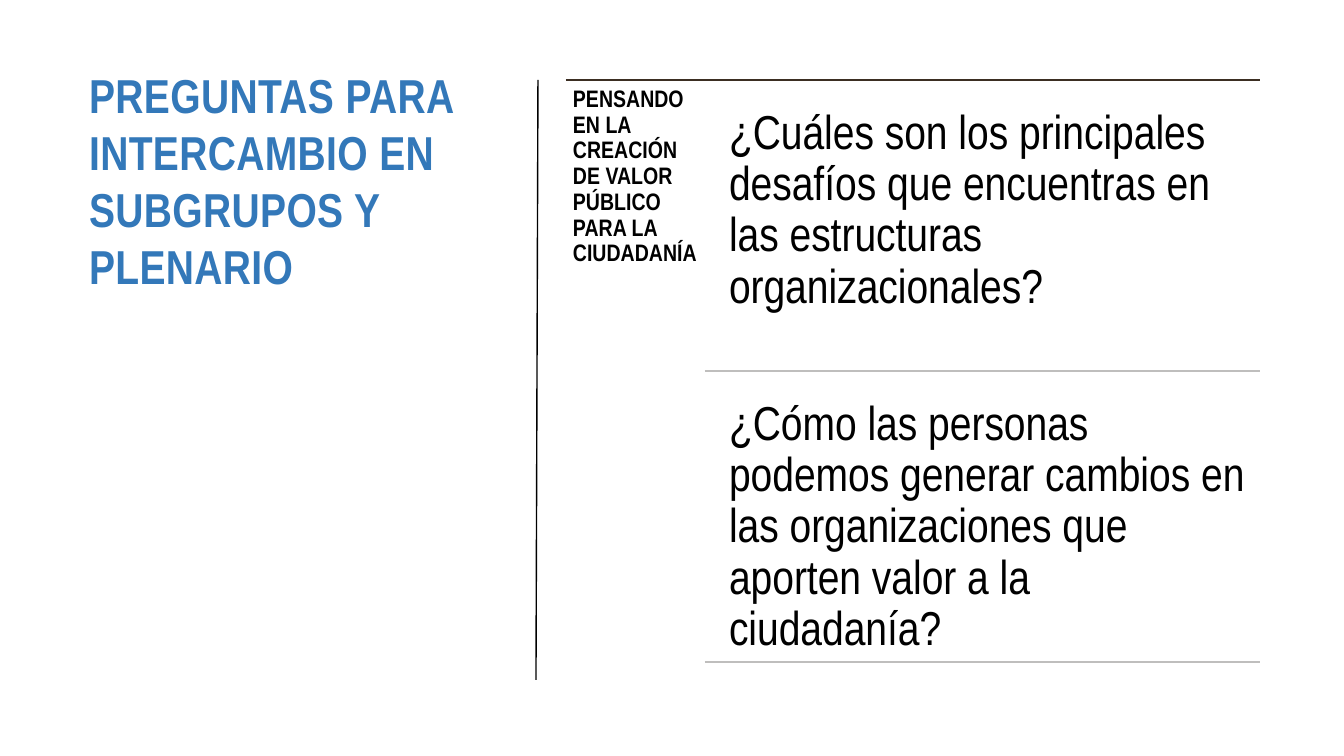
from dataclasses import dataclass

from lxml.etree import SubElement
from pptx import Presentation
from pptx.dml.color import RGBColor
from pptx.enum.shapes import MSO_CONNECTOR
from pptx.enum.text import MSO_ANCHOR, MSO_AUTO_SIZE, PP_ALIGN
from pptx.oxml.ns import qn
from pptx.util import Pt

TITLE = "PREGUNTAS PARA INTERCAMBIO EN SUBGRUPOS Y PLENARIO"
LABEL = "PENSANDO EN LA CREACIÓN DE VALOR PÚBLICO PARA LA CIUDADANÍA"
QUESTIONS = [
    "¿Cuáles son los principales desafíos que encuentras en las estructuras organizacionales?",
    "¿Cómo las personas podemos generar cambios en las organizaciones que aporten valor a la ciudadanía?",
]


@dataclass(frozen=True)
class Theme:
    font: str = "Arial Narrow"
    title_color: str = "3378B9"
    text_color: str = "000000"
    top_rule_color: str = "3B2E22"
    row_rule_color: str = "BFBEBD"
    large: int = 34
    small: int = 17
    rule_width: int = 1


THEME = Theme()
SLIDE_WIDTH, SLIDE_HEIGHT = 1344, 756
PANEL_LEFT, PANEL_TOP, PANEL_RIGHT = 566, 80, 1260
LABEL_WIDTH, LABEL_HEIGHT = 139, 597
QUESTION_INDENT, QUESTION_HEIGHT, ROW_GAP = 10, 277, 14


def px(length):
    return round(length * 914400 / 100.8)


def write_text(shape, text, size, color, bold=False, spacing=0.9):
    frame = shape.text_frame
    frame.word_wrap = True
    frame.auto_size = MSO_AUTO_SIZE.NONE
    frame.vertical_anchor = MSO_ANCHOR.TOP
    paragraph = frame.paragraphs[0]
    paragraph.text = text
    paragraph.alignment = PP_ALIGN.LEFT
    paragraph.line_spacing = spacing
    paragraph.font.name = THEME.font
    paragraph.font.size = Pt(size)
    paragraph.font.bold = bold
    paragraph.font.color.rgb = RGBColor.from_string(color)
    return paragraph


def add_text(slide, box, inset, text, size, bold=False):
    shape = slide.shapes.add_textbox(*map(px, box))
    frame = shape.text_frame
    frame.margin_left = frame.margin_right = px(inset)
    frame.margin_top = frame.margin_bottom = px(inset)
    write_text(shape, text, size, THEME.text_color, bold)


def add_rule(slide, start, end, color):
    rule = slide.shapes.add_connector(
        MSO_CONNECTOR.STRAIGHT, *map(px, (*start, *end))
    )
    rule.line.color.rgb = RGBColor.from_string(color)
    rule.line.width = Pt(THEME.rule_width)
    SubElement(rule._element.spPr, qn("a:effectLst"))


def add_title(slide):
    title = slide.shapes.title
    title.left, title.top, title.width, title.height = map(px, (79, 61, 399, 503))
    paragraph = write_text(title, TITLE, THEME.large, THEME.title_color, True, 1.0)
    paragraph.runs[0].font._element.set("spc", "30")


def add_questions(slide):
    row_left = PANEL_LEFT + LABEL_WIDTH
    question_left = row_left + QUESTION_INDENT
    bottom = PANEL_TOP
    for question in QUESTIONS:
        top = bottom + ROW_GAP
        bottom = top + QUESTION_HEIGHT
        box = (question_left, top, PANEL_RIGHT - question_left, QUESTION_HEIGHT)
        add_text(slide, box, 14, question, THEME.large)
        add_rule(slide, (row_left, bottom), (PANEL_RIGHT, bottom), THEME.row_rule_color)


def main():
    presentation = Presentation()
    presentation.slide_width = px(SLIDE_WIDTH)
    presentation.slide_height = px(SLIDE_HEIGHT)
    slide = presentation.slides.add_slide(presentation.slide_layouts[5])
    add_title(slide)
    add_rule(slide, (536, 680), (538, PANEL_TOP), THEME.text_color)
    add_rule(slide, (PANEL_LEFT, PANEL_TOP), (PANEL_RIGHT, PANEL_TOP), THEME.top_rule_color)
    label_box = (PANEL_LEFT, PANEL_TOP, LABEL_WIDTH, LABEL_HEIGHT)
    add_text(slide, label_box, 7, LABEL, THEME.small, True)
    add_questions(slide)
    presentation.save("out.pptx")


if __name__ == "__main__":
    main()
